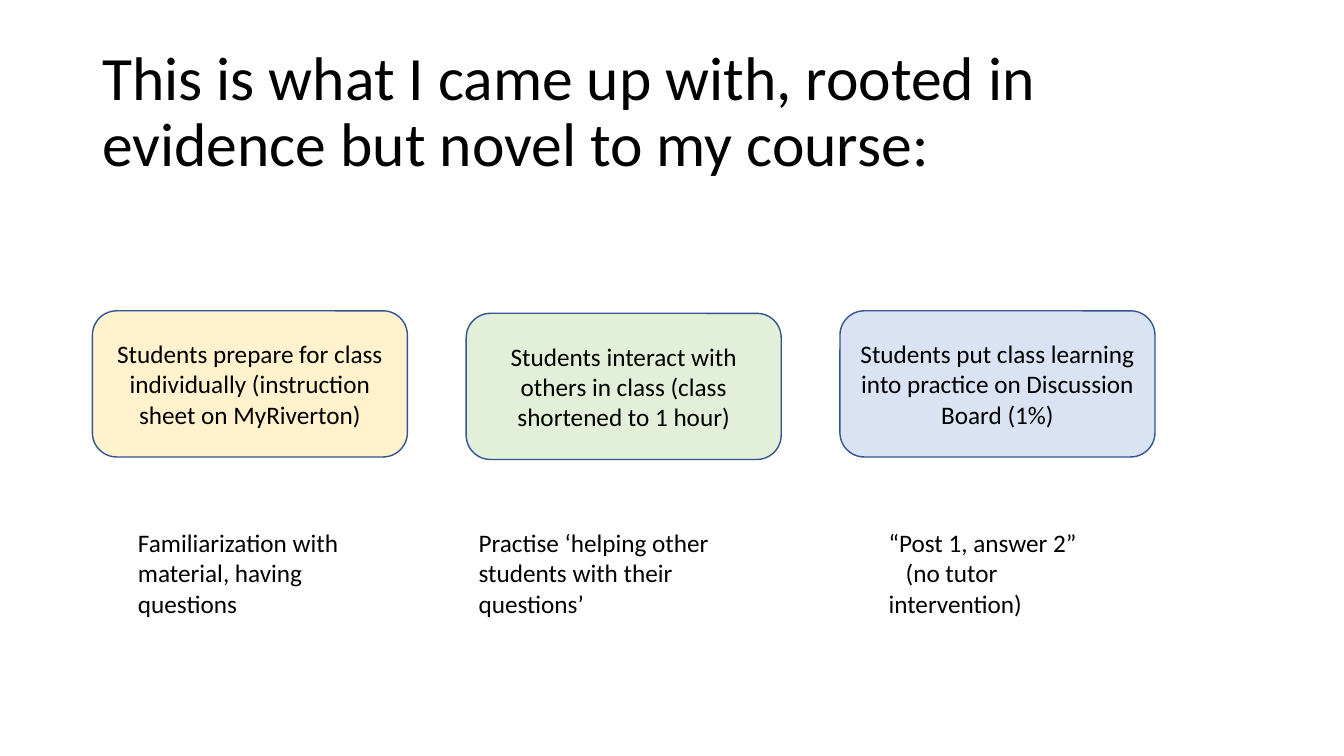
from dataclasses import dataclass

from pptx import Presentation
from pptx.dml.color import RGBColor
from pptx.enum.shapes import MSO_SHAPE
from pptx.enum.text import MSO_ANCHOR, PP_ALIGN
from pptx.util import Inches, Pt


@dataclass(frozen=True)
class Theme:
    font: str = "Calibri"
    title_size: int = 44
    body_size: int = 18
    ink: str = "000000"
    outline: str = "325491"
    yellow: str = "FFF2CC"
    green: str = "E2F0D9"
    blue: str = "DAE3F3"


class SlideBuilder:
    """Places elements on a grid of 160 columns by 90 rows."""

    COLS, ROWS = 160, 90

    def __init__(self, prs, theme):
        self.theme = theme
        self.s = prs.slides.add_slide(prs.slide_layouts[6])
        self.col = prs.slide_width / self.COLS
        self.row = prs.slide_height / self.ROWS

    def place(self, left, top, width, height):
        return (round(left * self.col), round(top * self.row),
                round(width * self.col), round(height * self.row))

    def set_text(self, sp, text, size, anchor, align=PP_ALIGN.LEFT):
        tf = sp.text_frame
        tf.word_wrap = True
        tf.vertical_anchor = anchor
        tf.text = text
        for p in tf.paragraphs:
            p.alignment = align
            for r in p.runs:
                r.font.name = self.theme.font
                r.font.size = Pt(size)
                r.font.color.rgb = RGBColor.from_string(self.theme.ink)
        return tf

    def title(self, text, *box):
        sp = self.s.shapes.add_textbox(*self.place(*box))
        tf = self.set_text(sp, text, self.theme.title_size, MSO_ANCHOR.MIDDLE)
        tf.paragraphs[0].line_spacing = 0.9

    def card(self, text, fill, *box):
        sp = self.s.shapes.add_shape(MSO_SHAPE.ROUNDED_RECTANGLE, *self.place(*box))
        sp.shadow.inherit = False
        sp.fill.solid()
        sp.fill.fore_color.rgb = RGBColor.from_string(fill)
        sp.line.color.rgb = RGBColor.from_string(self.theme.outline)
        sp.line.width = Pt(1)
        self.set_text(sp, text, self.theme.body_size, MSO_ANCHOR.MIDDLE, PP_ALIGN.CENTER)

    def note(self, text, *box):
        sp = self.s.shapes.add_textbox(*self.place(*box))
        tf = self.set_text(sp, text, self.theme.body_size, MSO_ANCHOR.TOP)
        # Later paragraphs start with a small first-line indent
        for p in tf.paragraphs[1:]:
            p._p.get_or_add_pPr().set("indent", str(Inches(0.17)))
            tf.margin_right = Inches(0.3)


def main():
    prs = Presentation()
    prs.slide_width, prs.slide_height = Inches(13.33), Inches(7.5)
    theme = Theme()
    slide = SlideBuilder(prs, theme)

    # Title
    margin, block_height = 11, 17.4
    slide.title("This is what I came up with, rooted in evidence but novel to my course:",
                margin, 4.8, 138, block_height)

    # Stages: card text, fill, card top, note text, note left
    stages = [
        ("Students prepare for class individually (instruction sheet on MyRiverton)",
         theme.yellow, 37, "Familiarization with material, having questions", 15.25),
        ("Students interact with others in class (class shortened to 1 hour)",
         theme.green, 37.3, "Practise ‘helping other students with their questions’", 55.8),
        ("Students put class learning into practice on Discussion Board (1%)",
         theme.blue, 37, "“Post 1, answer 2”\n(no tutor intervention)", 104.6),
    ]
    pitch, card_width = 44.5, 37.5
    for i, (text, fill, top, note, note_left) in enumerate(stages):
        slide.card(text, fill, margin + i * pitch, top, card_width, block_height)
        slide.note(note, note_left, 62.2, 30.8, 12.1)

    prs.save("out.pptx")


if __name__ == "__main__":
    main()
